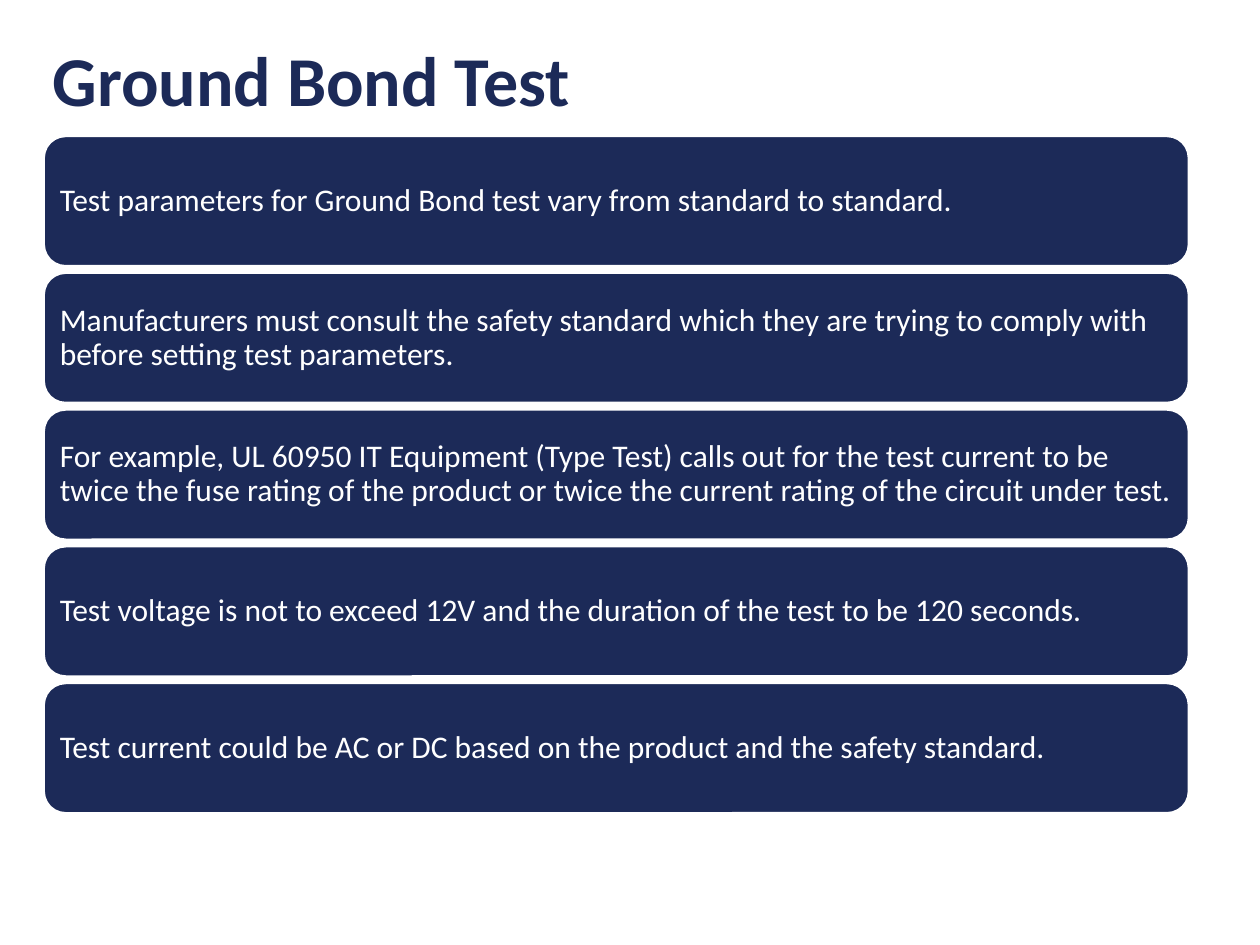
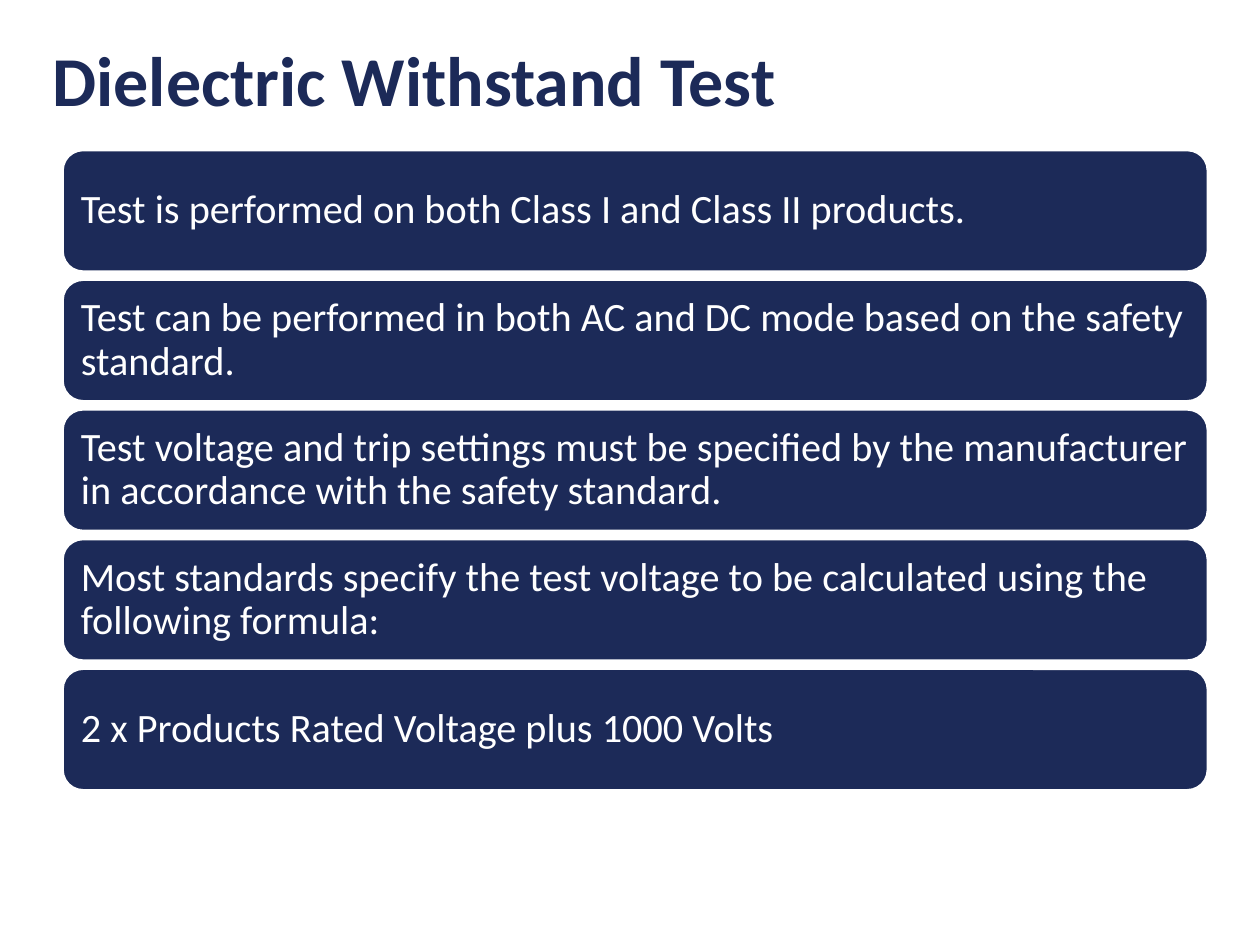
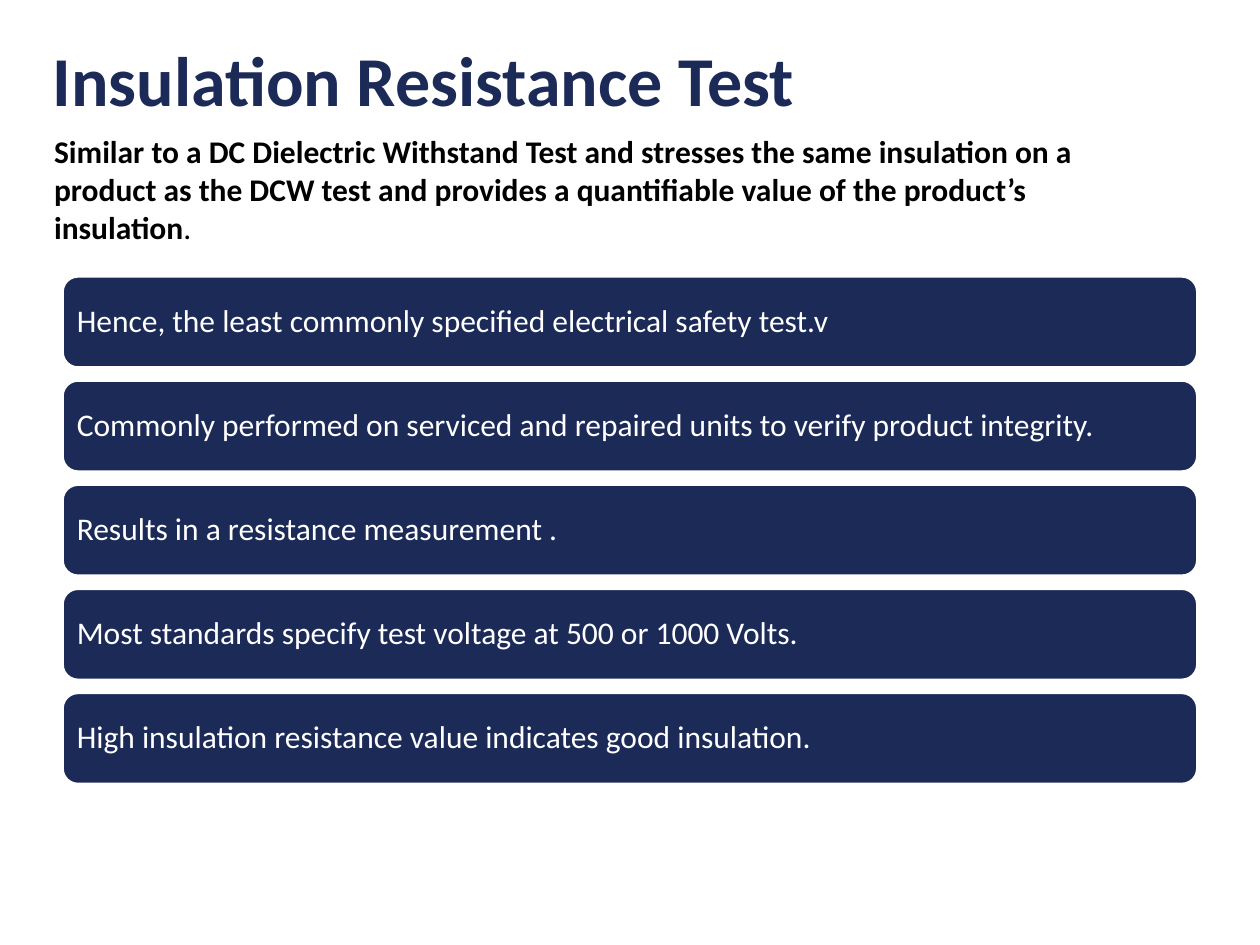
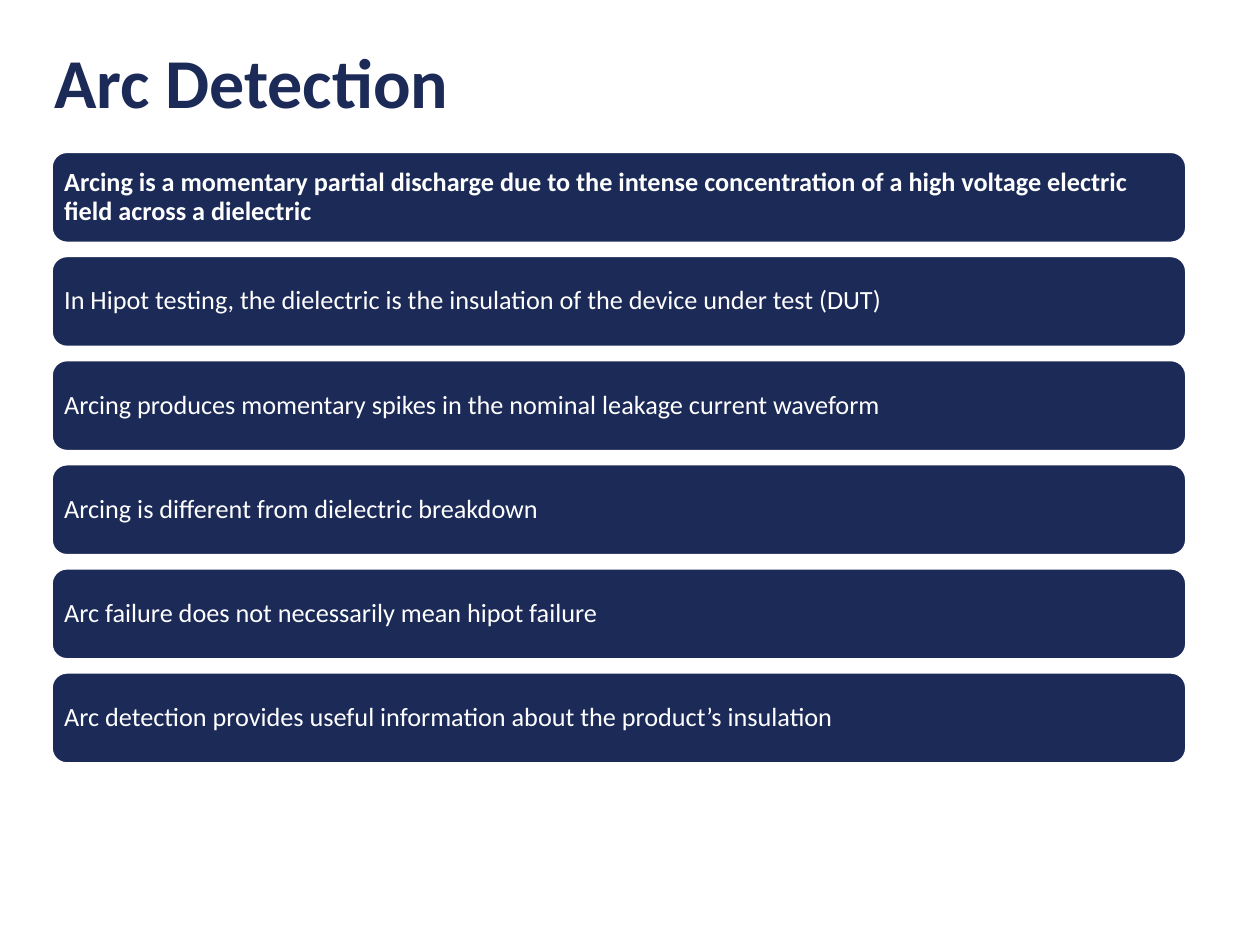
from pptx import Presentation
from pptx.dml.color import RGBColor
from pptx.enum import shapes, text
from pptx.util import Pt

NAVY, WHITE, BLACK = "1C2A58", "FFFFFF", "000000"
FONT = "Calibri"


def rgb(value):
    return RGBColor.from_string(value)


def add_run(p, words, size=18, color=BLACK, bold=False):
    r = p.add_run()
    r.text = words
    r.font.name = FONT
    r.font.size = Pt(size)
    r.font.bold = bold
    r.font.color.rgb = rgb(color)


class Deck:
    def __init__(self):
        self.prs = Presentation()
        self.prs.slide_width, self.prs.slide_height = Pt(720), Pt(540)
        self.s = None

    def slide(self):
        self.s = self.prs.slides.add_slide(self.prs.slide_layouts[6])
        self.s.background.fill.solid()
        self.s.background.fill.fore_color.rgb = rgb(WHITE)

    def text_box(self, left, top, width, height):
        tf = self.s.shapes.add_textbox(Pt(left), Pt(top), Pt(width), Pt(height)).text_frame
        tf.word_wrap = True
        return tf

    def title(self, words, offset=23, height=98.6):
        p = self.text_box(offset, offset, 648, height).paragraphs[0]
        p.line_spacing = 0.9
        add_run(p, words, size=40, color=NAVY, bold=True)

    def intro(self, words, ending):
        """Bold lead paragraph that closes with a regular-weight ending."""
        tf = self.text_box(23.8, 72, 642.2, 72.7)
        tf.auto_size = text.MSO_AUTO_SIZE.SHAPE_TO_FIT_TEXT
        add_run(tf.paragraphs[0], words, bold=True)
        add_run(tf.paragraphs[0], ending)

    def bar(self, words, left, top, width, height, size, bold=False):
        sp = self.s.shapes.add_shape(shapes.MSO_SHAPE.ROUNDED_RECTANGLE,
                                     Pt(left), Pt(top), Pt(width), Pt(height))
        sp.shadow.inherit = False
        sp.fill.solid()
        sp.fill.fore_color.rgb = rgb(NAVY)
        sp.line.color.rgb = rgb(WHITE)
        sp.line.width = Pt(1)
        tf = sp.text_frame
        tf.word_wrap = True
        tf.vertical_anchor = text.MSO_ANCHOR.MIDDLE
        tf.margin_left = tf.margin_right = tf.margin_top = tf.margin_bottom = Pt(0.3 * size)
        p = tf.paragraphs[0]
        p.alignment = text.PP_ALIGN.LEFT
        p.line_spacing = 0.9
        add_run(p, words, size=size, color=WHITE, bold=bold)

    def bars(self, items, left, top, width, height, pitch, size, bold_first=False):
        """Stack one bar per item, with tops a pitch apart."""
        for i, words in enumerate(items):
            self.bar(words, left, top + i * pitch, width, height, size,
                     bold=bold_first and i == 0)


def main():
    deck = Deck()

    deck.slide()
    deck.bars([
        "Test parameters for Ground Bond test vary from standard to standard.",
        "Manufacturers must consult the safety standard which they are trying to comply with "
        "before setting test parameters.",
        "For example, UL 60950 IT Equipment (Type Test) calls out for the test current to be "
        "twice the fuse rating of the product or twice the current rating of the circuit "
        "under test.",
        "Test voltage is not to exceed 12V and the duration of the test to be 120 seconds.",
        "Test current could be AC or DC based on the product and the safety standard.",
    ], left=25.2, top=77.9, width=654, height=74, pitch=78.15, size=18)
    deck.title("Ground Bond Test")

    deck.slide()
    deck.bars([
        "Test is performed on both Class I and Class II products.",
        "Test can be performed in both AC and DC mode based on the safety standard.",
        "Test voltage and trip settings must be specified by the manufacturer in accordance "
        "with the safety standard.",
        "Most standards specify the test voltage to be calculated using the following formula:",
        "2 x Products Rated Voltage plus 1000 Volts",
    ], left=36, top=86, width=654, height=69, pitch=74.1, size=23)
    deck.title("Dielectric Withstand Test")

    deck.slide()
    deck.bars([
        "Hence, the least commonly specified electrical safety test.v",
        "Commonly performed on serviced and repaired units to verify product integrity.",
        "Results in a resistance measurement .",
        "Most standards specify test voltage at 500 or 1000 Volts.",
        "High insulation resistance value indicates good insulation.",
    ], left=36, top=158.2, width=648, height=51.6, pitch=59.5, size=18)
    deck.intro("Similar to a DC Dielectric Withstand Test and stresses the same insulation on a "
               "product as the DCW test and provides a quantifiable value of the product’s "
               "insulation", ".")
    deck.title("Insulation Resistance Test")

    deck.slide()
    deck.bars([
        "Arcing is a momentary partial discharge due to the intense concentration of a high "
        "voltage electric field across a dielectric",
        "In Hipot testing, the dielectric is the insulation of the device under test (DUT)",
        "Arcing produces momentary spikes in the nominal leakage current waveform",
        "Arcing is different from dielectric breakdown",
        "Arc failure does not necessarily mean hipot failure",
        "Arc detection provides useful information about the product’s insulation",
    ], left=29.7, top=87, width=648, height=51.6, pitch=59.5, size=15, bold_first=True)
    deck.title("Arc Detection", offset=24, height=72)

    deck.prs.save("out.pptx")


if __name__ == "__main__":
    main()
